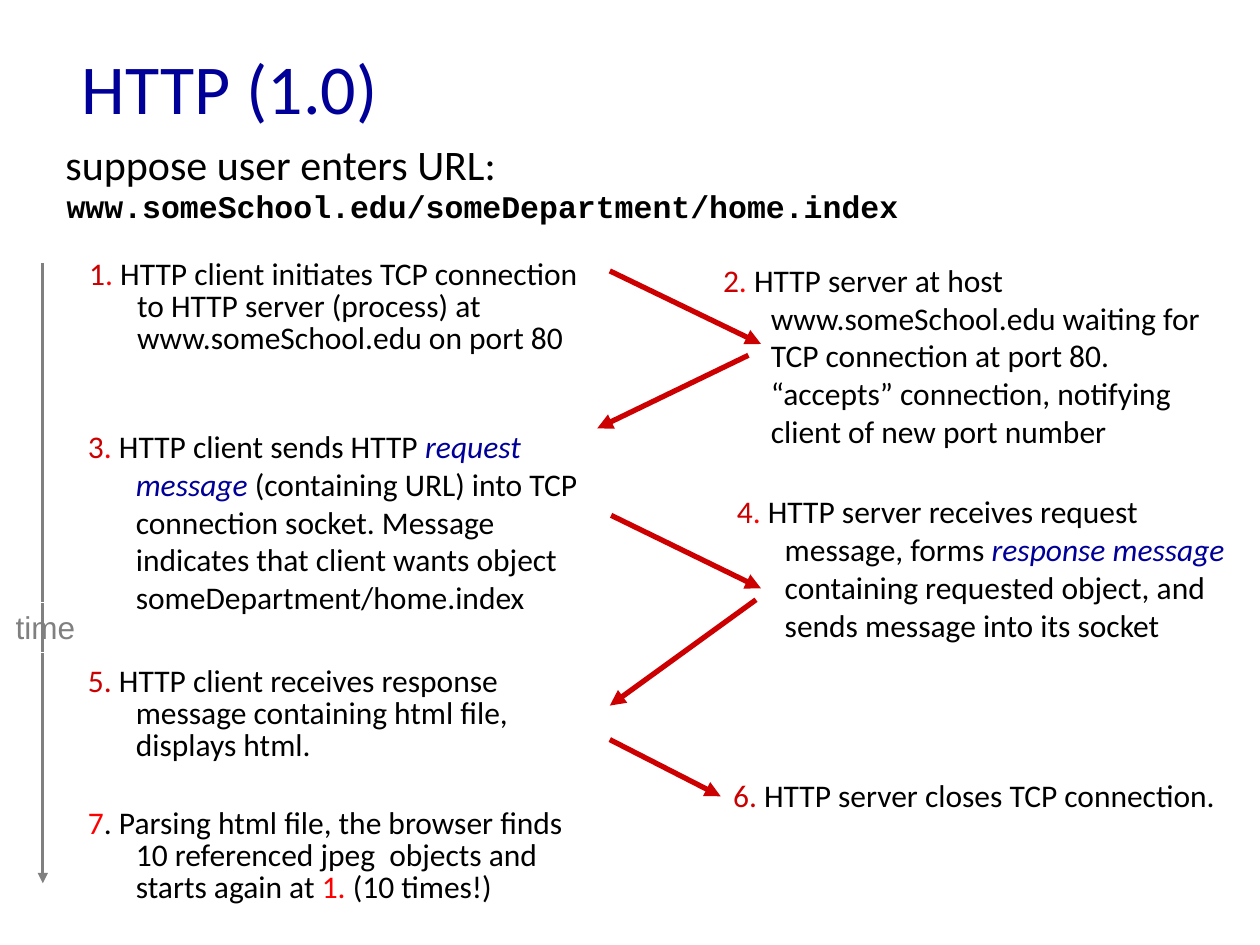
from dataclasses import dataclass

from lxml.etree import SubElement
from pptx import Presentation
from pptx.dml.color import RGBColor
from pptx.enum.shapes import MSO_CONNECTOR, MSO_SHAPE
from pptx.enum.text import MSO_ANCHOR, MSO_AUTO_SIZE, PP_ALIGN
from pptx.oxml.ns import qn
from pptx.util import Inches, Pt


@dataclass(frozen=True)
class Theme:
    navy: RGBColor = RGBColor(0x00, 0x00, 0x99)
    black: RGBColor = RGBColor(0x00, 0x00, 0x00)
    crimson: RGBColor = RGBColor(0xCC, 0x00, 0x00)
    red: RGBColor = RGBColor(0xFF, 0x00, 0x00)
    gray: RGBColor = RGBColor(0x80, 0x80, 0x80)
    white: RGBColor = RGBColor(0xFF, 0xFF, 0xFF)
    text_font: str = "Calibri"
    code_font: str = "Courier New"
    label_font: str = "Arial"
    title_size: Pt = Pt(40)
    lead_size: Pt = Pt(24)
    body_size: Pt = Pt(18)
    message_width: Pt = Pt(3)
    axis_width: Pt = Pt(1.5)
    border_width: Pt = Pt(0.75)
    tight: float = 0.85
    paragraph_gap: Pt = Pt(26)


THEME = Theme()
HANGING = Inches(0.38)


def numbered(number, *parts, dot=THEME.crimson):
    """Return the (text, colour) runs of a step with a coloured number."""
    return [(number, THEME.crimson), (".", dot), *parts]


# Each step: box, line spacing, paragraphs of (text, colour) runs
STEPS = [
    ((0.61, 2.01, 4.31, 1.2), THEME.tight, [numbered(
        "1", (" HTTP client initiates TCP connection to HTTP server (process) at "
              "www.someSchool.edu on port 80", THEME.black), dot=THEME.red)]),
    ((5.64, 2.02, 4.17, 1.65), 1.0, [numbered(
        "2", (" HTTP server at host www.someSchool.edu waiting for TCP connection "
              "at port 80.  “accepts” connection, notifying client of new port number",
              THEME.black), dot=THEME.red)]),
    ((0.6, 3.34, 4.17, 1.6), 1.0, [numbered(
        "3", (" HTTP client sends HTTP ", THEME.black),
        ("request message", THEME.navy),
        (" (containing URL) into TCP connection socket. Message indicates that "
         "client wants object someDepartment/home.index", THEME.black), dot=THEME.red)]),
    ((5.75, 3.86, 4.17, 1.97), 1.0, [numbered(
        "4", (" HTTP server receives request message, forms ", THEME.black),
        ("response message", THEME.navy),
        (" containing requested object, and sends message into its socket",
         THEME.black), dot=THEME.red)]),
    ((0.6, 5.24, 4.1, 2.0), THEME.tight, [
        numbered("5", (" HTTP client receives response message containing html file, "
                       "displays html.", THEME.black)),
        [("7", THEME.red),
         (". Parsing html file, the browser finds 10 referenced jpeg  objects and "
          "starts again at ", THEME.black),
         ("1.", THEME.red), (" (10 times!)", THEME.black)]]),
    ((5.72, 6.11, 4.17, 0.5), 1.0, [numbered(
        "6", (" HTTP server closes TCP connection.", THEME.black))]),
]

MESSAGES = [
    ((4.84, 2.15), (6.04, 2.73)),
    ((5.94, 2.82), (4.74, 3.4)),
    ((4.85, 4.09), (6.04, 4.67)),
    ((6, 4.76), (4.84, 5.6)),
    ((4.84, 5.87), (5.72, 6.32)),
]


def style(run, font, size, color):
    run.font.name = font
    run.font.size = size
    run.font.color.rgb = color


def place(shape, box):
    shape.left, shape.top, shape.width, shape.height = map(Inches, box)


def add_title(slide, box):
    title = slide.shapes.title
    place(title, box)
    frame = title.text_frame
    frame.text = "HTTP (1.0)"
    frame.auto_size = MSO_AUTO_SIZE.NONE
    frame.vertical_anchor = MSO_ANCHOR.MIDDLE
    paragraph = frame.paragraphs[0]
    paragraph.alignment = PP_ALIGN.LEFT
    style(paragraph.runs[0], THEME.text_font, THEME.title_size, THEME.navy)


def add_text(slide, box, paragraphs, spacing, font=THEME.text_font, size=THEME.body_size):
    """Add hanging paragraphs of (text, colour) runs; navy runs are italic."""
    frame = slide.shapes.add_textbox(*map(Inches, box)).text_frame
    frame.word_wrap = True
    for index, runs in enumerate(paragraphs):
        paragraph = frame.add_paragraph() if index else frame.paragraphs[0]
        paragraph.line_spacing = spacing
        if index:
            paragraph.space_before = THEME.paragraph_gap
        properties = paragraph._p.get_or_add_pPr()
        properties.set("marL", str(HANGING))
        properties.set("indent", str(-HANGING))
        for text, color in runs:
            run = paragraph.add_run()
            run.text = text
            style(run, font, size, color)
            run.font.italic = color == THEME.navy
    return frame


def add_url(slide, left, top, width):
    height = 0.51
    add_text(slide, (left, top, width, height),
             [[("suppose user enters URL:", THEME.black)]],
             THEME.tight, size=THEME.lead_size)
    address = add_text(slide, (left + 0.01, top + 0.37, width, height),
                       [[("www.someSchool.edu/someDepartment/home.index", THEME.black)]],
                       THEME.tight, font=THEME.code_font)
    address.paragraphs[0].runs[0].font.bold = True


def add_arrow(slide, start, end, color, width):
    arrow = slide.shapes.add_connector(
        MSO_CONNECTOR.STRAIGHT, *map(Inches, (*start, *end)))
    arrow.line.color.rgb = color
    arrow.line.width = width
    SubElement(arrow.line._get_or_add_ln(), qn("a:tailEnd"), type="triangle")
    SubElement(arrow._element.spPr, qn("a:effectLst"))


def add_time_axis(slide, x, top, bottom, label_box):
    add_arrow(slide, (x, top), (x, bottom), THEME.gray, THEME.axis_width)
    label = slide.shapes.add_shape(MSO_SHAPE.RECTANGLE, *map(Inches, label_box))
    label.shadow.inherit = False
    label.fill.background()
    label.line.color.rgb = THEME.white
    label.line.width = THEME.border_width
    frame = label.text_frame
    frame.text = "time"
    frame.word_wrap = False
    frame.auto_size = MSO_AUTO_SIZE.SHAPE_TO_FIT_TEXT
    frame.vertical_anchor = MSO_ANCHOR.TOP
    paragraph = frame.paragraphs[0]
    paragraph.alignment = PP_ALIGN.CENTER
    style(paragraph.runs[0], THEME.label_font, THEME.body_size, THEME.gray)


def add_exchange(slide):
    """Add the client and server steps and the messages between them."""
    for box, spacing, paragraphs in STEPS:
        add_text(slide, box, paragraphs, spacing)
    for start, end in MESSAGES:
        add_arrow(slide, start, end, THEME.crimson, THEME.message_width)


def main():
    presentation = Presentation()
    presentation.slide_width = Inches(10)
    presentation.slide_height = Inches(7.5)
    slide = presentation.slides.add_slide(presentation.slide_layouts.get_by_name("Title Only"))
    add_title(slide, (0.55, 0.21, 8.5, 0.95))
    add_time_axis(slide, 0.34, 2.09, 7.01, (0.02, 4.78, 0.68, 0.4))
    add_url(slide, 0.42, 1.11, 8.69)
    add_exchange(slide)
    presentation.save("out.pptx")


if __name__ == "__main__":
    main()
